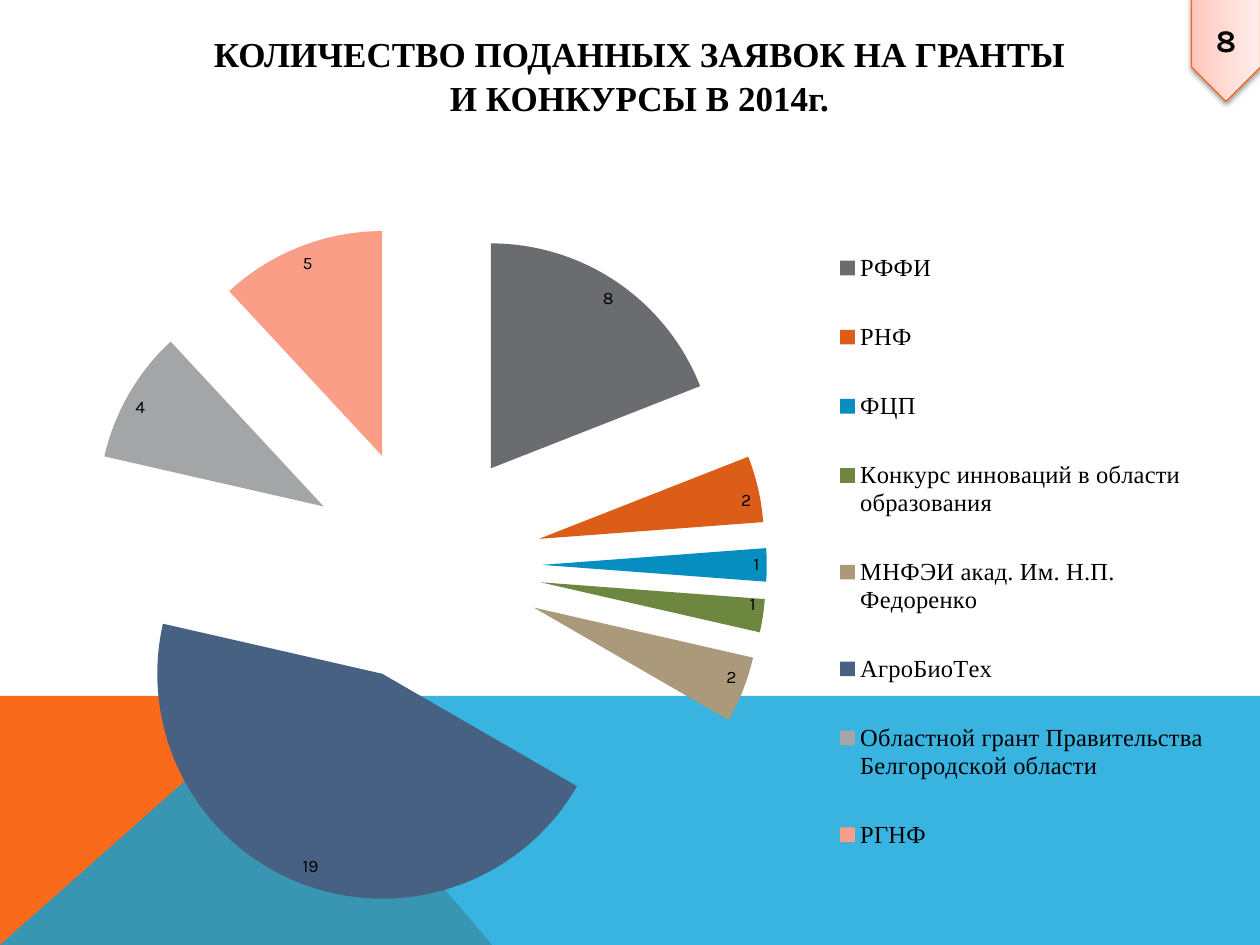
from typing import NamedTuple

from lxml import etree
from pptx import Presentation
from pptx import util as u
from pptx.chart.data import CategoryChartData
from pptx.dml.color import RGBColor
from pptx.enum import chart as ch
from pptx.enum import shapes, text
from pptx.oxml import parse_xml
from pptx.oxml.ns import nsdecls, qn

SCALE = 914400 / 126
WIDE, HIGH = 1260, 945
SERIF, SANS = "Times New Roman", "Karla"

BLACK = RGBColor(0x00, 0x00, 0x00)
ORANGE = RGBColor(0xF9, 0x6A, 0x1B)
BLUE = RGBColor(0x08, 0xA1, 0xD9)
EDGE = RGBColor(0xF9, 0x66, 0x15)


class Box(NamedTuple):
    x: int
    y: int
    w: int
    h: int


class Band(NamedTuple):
    points: list[tuple[int, int]]
    color: RGBColor
    alpha: int


class Slice(NamedTuple):
    name: str
    value: int
    color: RGBColor


BANDS = [
    Band([(0, HIGH), (0, 696), (281, 696), (492, HIGH)], ORANGE, 100),
    Band([(0, HIGH), (281, 696), (WIDE, 696), (WIDE, HIGH)], BLUE, 80),
]
SLICES = [
    Slice("РФФИ", 8, RGBColor(0x6B, 0x6C, 0x70)),
    Slice("РНФ", 2, RGBColor(0xDC, 0x5D, 0x18)),
    Slice("ФЦП", 1, RGBColor(0x07, 0x8E, 0xC0)),
    Slice("Конкурс инноваций в области образования", 1,
          RGBColor(0x6D, 0x87, 0x41)),
    Slice("МНФЭИ акад. Им. Н.П. Федоренко", 2, RGBColor(0xAB, 0x99, 0x7C)),
    Slice("АгроБиоТех", 19, RGBColor(0x47, 0x61, 0x83)),
    Slice("Областной грант Правительства Белгородской области", 4,
          RGBColor(0xA4, 0xA5, 0xA7)),
    Slice("РГНФ", 5, RGBColor(0xFB, 0x9E, 0x87)),
]
TITLE = ["КОЛИЧЕСТВО ПОДАННЫХ ЗАЯВОК НА ГРАНТЫ", "И КОНКУРСЫ В 2014г."]
STOPS = [(0, "FFC5BA"), (35, "FFD6CF"), (100, "FFEFED")]


def px(n: int) -> u.Emu:
    return u.Emu(round(n * SCALE))


def frame(box: Box) -> list[u.Emu]:
    return [px(n) for n in box]


def style(font, name: str, size: int, bold: bool = False) -> None:
    font.name, font.size, font.bold = name, u.Pt(size), bold
    font.color.rgb = BLACK


def draw_band(slide, band: Band) -> None:
    start, *rest = band.points
    build = slide.shapes.build_freeform(*start, scale=SCALE)
    build.add_line_segments(rest, close=True)
    shape = build.convert_to_shape()
    shape.shadow.inherit = False
    shape.fill.solid()
    shape.fill.fore_color.rgb = band.color
    shape.line.fill.background()
    if band.alpha < 100:
        color = shape.fill._xPr.find(".//" + qn("a:srgbClr"))
        etree.SubElement(color, qn("a:alpha"), val=str(band.alpha * 1000))


def draw_title(slide, box: Box) -> None:
    title = slide.shapes.title
    title.left, title.top, title.width, title.height = frame(box)
    body = title.text_frame
    body.word_wrap = True
    body.auto_size = text.MSO_AUTO_SIZE.NONE
    body.vertical_anchor = text.MSO_ANCHOR.MIDDLE
    para = body.paragraphs[0]
    para.alignment = text.PP_ALIGN.CENTER
    para.line_spacing = 1.05
    for i, line in enumerate(TITLE):
        if i:
            para.add_line_break()
        run = para.add_run()
        run.text = line
        style(run.font, SERIF, 20, True)


def place(parent, after: str, x: float, y: float, w: float, h: float,
          inner: bool = False) -> None:
    """Give a chart part a manual layout, as shares of the chart."""
    for old in parent.findall(qn("c:layout")):
        parent.remove(old)
    target = '<c:layoutTarget val="inner"/>' if inner else ""
    layout = parse_xml(
        f'<c:layout {nsdecls("c")}><c:manualLayout>{target}'
        '<c:xMode val="edge"/><c:yMode val="edge"/>'
        f'<c:x val="{x}"/><c:y val="{y}"/><c:w val="{w}"/><c:h val="{h}"/>'
        '</c:manualLayout></c:layout>')
    prior = parent.find(qn(after)) if after else None
    if prior is None:
        parent.insert(0, layout)
    else:
        prior.addnext(layout)


def draw_pie(slide, box: Box) -> None:
    data = CategoryChartData()
    data.categories = [s.name for s in SLICES]
    data.add_series("Series 1", [s.value for s in SLICES])
    chart = slide.shapes.add_chart(
        ch.XL_CHART_TYPE.PIE, *frame(box), data).chart
    chart.has_title = False
    style(chart.font, SANS, 10)

    chart.has_legend = True
    legend = chart.legend
    legend.position = ch.XL_LEGEND_POSITION.RIGHT
    legend.include_in_layout = False
    style(legend.font, SERIF, 14)

    plot = chart.plots[0]
    plot.vary_by_categories = True
    series = plot.series[0]
    for i, part in enumerate(SLICES):
        form = series.points[i].format
        form.fill.solid()
        form.fill.fore_color.rgb = part.color
        form.line.fill.background()
    burst = parse_xml(f'<c:explosion {nsdecls("c")} val="52"/>')
    series._element.find(qn("c:dPt")).addprevious(burst)

    labels = series.data_labels
    labels.show_value = True
    labels.position = ch.XL_LABEL_POSITION.INSIDE_END
    style(labels.font, SANS, 10)

    area = chart._chartSpace.find(".//" + qn("c:plotArea"))
    place(area, "", 0.017, 0.064, 0.632, 0.908, inner=True)
    place(legend._element, "c:legendPos", 0.67, 0.05, 0.32, 0.9)


def draw_badge(slide, box: Box, label: str) -> None:
    """Draw the page number on a pentagon that points down."""
    badge = slide.shapes.add_shape(
        shapes.MSO_SHAPE.PENTAGON, *frame(box))
    badge.rotation = 90
    badge.line.color.rgb = EDGE
    badge.line.width = u.Pt(0.75)
    badge.fill.gradient()
    stops = "".join(
        f'<a:gs pos="{at * 1000}"><a:srgbClr val="{color}"/></a:gs>'
        for at, color in STOPS)
    props = badge._element.spPr
    old = props.find(qn("a:gradFill"))
    props.replace(old, parse_xml(
        f'<a:gradFill {nsdecls("a")} rotWithShape="1"><a:gsLst>{stops}'
        '</a:gsLst><a:lin ang="16200000" scaled="1"/></a:gradFill>'))
    badge.shadow.inherit = False
    props.find(qn("a:effectLst")).append(parse_xml(
        f'<a:outerShdw {nsdecls("a")} blurRad="{u.Pt(3.1)}" '
        f'dist="{u.Pt(1.6)}" dir="5400000" rotWithShape="0">'
        '<a:srgbClr val="000000"><a:alpha val="38000"/></a:srgbClr>'
        '</a:outerShdw>'))
    body = badge.text_frame
    body.vertical_anchor = text.MSO_ANCHOR.MIDDLE
    body._txBody.bodyPr.set("vert", "vert270")
    para = body.paragraphs[0]
    para.alignment = text.PP_ALIGN.CENTER
    run = para.add_run()
    run.text = label
    style(run.font, SANS, 18, True)


def main() -> None:
    deck = Presentation()
    deck.slide_width, deck.slide_height = px(WIDE), px(HIGH)
    slide = deck.slides.add_slide(deck.slide_layouts[5])
    for band in BANDS:
        draw_band(slide, band)
    draw_title(slide, Box(54, 26, 1171, 97))
    draw_pie(slide, Box(25, 175, 1201, 753))
    draw_badge(slide, Box(1173, 14, 106, 69), "8")
    deck.save("out.pptx")


if __name__ == "__main__":
    main()
